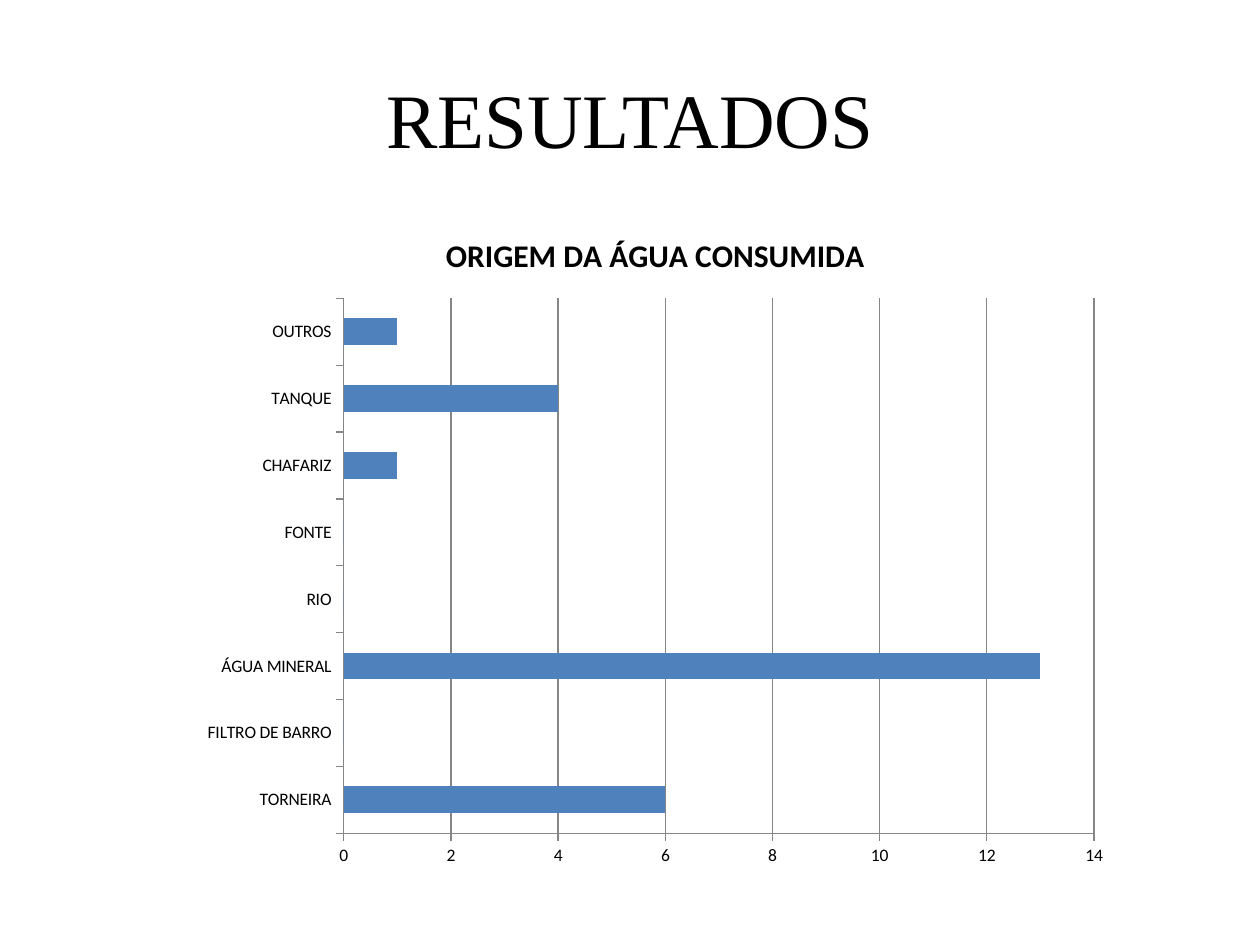
import pptx
import pptx.chart.data
import pptx.dml.color
import pptx.enum.chart
import pptx.enum.text
import pptx.util

COLORS = {"text": "000000", "bar": "4F81BD", "line": "868686", "background": "FFFFFF"}
ORIGINS = {
    "TORNEIRA": 6,
    "FILTRO DE BARRO": 0,
    "ÁGUA MINERAL": 13,
    "RIO": 0,
    "FONTE": 0,
    "CHAFARIZ": 1,
    "TANQUE": 4,
    "OUTROS": 1,
}


class SlideBuilder:
    """Holds the style and the current slide, placing elements by shares of its size."""

    def __init__(self, deck):
        self.width, self.height = deck.slide_width, deck.slide_height
        self.page = deck.slides.add_slide(deck.slide_layouts[6])
        self.heading_font, self.chart_font = "Times New Roman", "Calibri"
        fill = self.page.background.fill
        fill.solid()
        fill.fore_color.rgb = self.color("background")

    def color(self, name):
        return pptx.dml.color.RGBColor.from_string(COLORS[name])

    def area(self, left, top, width, height):
        return (int(left * self.width), int(top * self.height),
                int(width * self.width), int(height * self.height))

    def style_font(self, font, name, size, bold=False):
        font.name, font.size, font.bold = name, pptx.util.Pt(size), bold
        font.color.rgb = self.color("text")

    def style_line(self, line):
        line.color.rgb = self.color("line")
        line.width = pptx.util.Pt(0.75)

    def heading(self, text, *shares):
        frame = self.page.shapes.add_textbox(*self.area(*shares)).text_frame
        frame.word_wrap = True
        frame.vertical_anchor = pptx.enum.text.MSO_ANCHOR.MIDDLE
        para = frame.paragraphs[0]
        para.alignment = pptx.enum.text.PP_ALIGN.CENTER
        span = para.add_run()
        span.text = text
        self.style_font(span.font, self.heading_font, 44)

    def bar_chart(self, title, values, *shares):
        data = pptx.chart.data.CategoryChartData()
        data.categories = list(values)
        data.add_series("Series 1", list(values.values()))
        kind = pptx.enum.chart.XL_CHART_TYPE.BAR_CLUSTERED
        chart = self.page.shapes.add_chart(kind, *self.area(*shares), data).chart
        self.style_font(chart.font, self.chart_font, 10)
        chart.has_legend = False
        chart.has_title = True
        chart.chart_title.include_in_layout = False
        span = chart.chart_title.text_frame.paragraphs[0].add_run()
        span.text = title
        self.style_font(span.font, self.chart_font, 18, bold=True)
        for axis in (chart.category_axis, chart.value_axis):
            axis.major_tick_mark = pptx.enum.chart.XL_TICK_MARK.OUTSIDE
            axis.minor_tick_mark = pptx.enum.chart.XL_TICK_MARK.NONE
            self.style_line(axis.format.line)
        scale = chart.value_axis
        scale.minimum_scale, scale.maximum_scale, scale.major_unit = 0, 14, 2
        scale.has_major_gridlines = True
        self.style_line(scale.major_gridlines.format.line)
        plot = chart.plots[0]
        plot.gap_width = 150
        plot.vary_by_categories = False
        fill = plot.series[0].format.fill
        fill.solid()
        fill.fore_color.rgb = self.color("bar")


def main():
    deck = pptx.Presentation()
    deck.slide_width, deck.slide_height = pptx.util.Inches(10), pptx.util.Inches(7.5)
    builder = SlideBuilder(deck)
    builder.heading("RESULTADOS", 0.05, 0.04, 0.9, 0.17)
    builder.bar_chart("ORIGEM DA ÁGUA CONSUMIDA", ORIGINS, 0.15, 0.22, 0.74, 0.71)
    deck.save("out.pptx")


if __name__ == "__main__":
    main()
